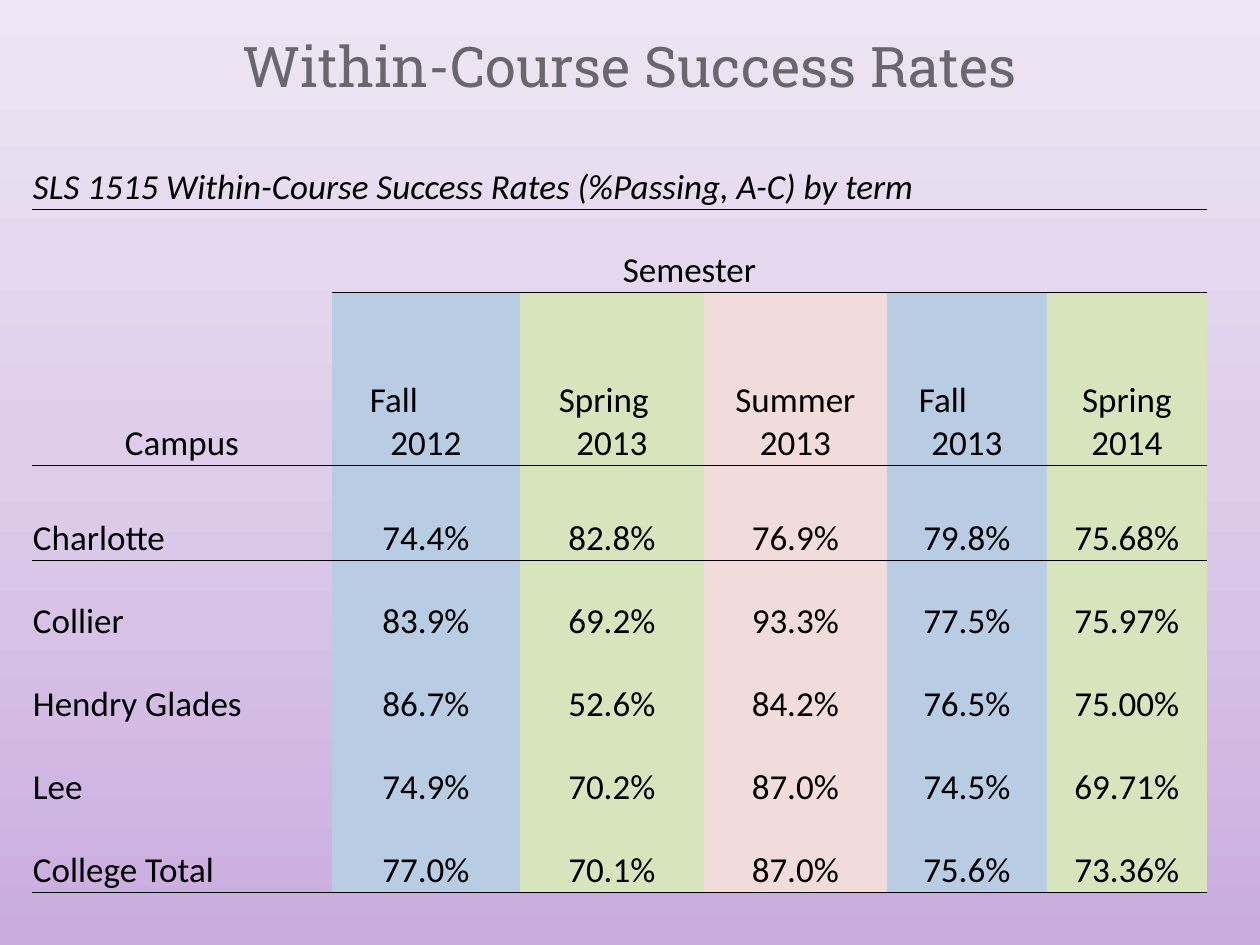
"""Build the within-course success rates slide."""
import pptx
import pptx.dml.color
import pptx.enum.text
import pptx.oxml.ns
import pptx.util
from lxml import etree

qn = pptx.oxml.ns.qn
ALIGN = pptx.enum.text.PP_ALIGN
ANCHOR = pptx.enum.text.MSO_ANCHOR
BLUE, GREEN, PINK = "B8CCE4", "D8E4BC", "F2DCDB"
TERM_FILLS = [BLUE, GREEN, PINK, BLUE, GREEN]
COL_WIDTHS = [300, 188, 184, 183, 160, 160]
ROW_HEIGHTS = [83, 83, 173, 95, 83, 83, 83, 83]
RULED_ROWS = {0, 1, 2, 7}
NO_STYLE = "{2D5ABB26-0587-4C30-8999-92F81FD0307C}"
TERMS = [
    [("Fall", 37), ("2012", 0)],
    [("Spring", 38), ("2013", 0)],
    [("Summer 2013", 0)],
    [("Fall", 31), ("2013", 0)],
    [("Spring 2014", 0)],
]
RATES = [
    ["Charlotte", "74.4%", "82.8%", "76.9%", "79.8%", "75.68%"],
    ["Collier", "83.9%", "69.2%", "93.3%", "77.5%", "75.97%"],
    ["Hendry Glades", "86.7%", "52.6%", "84.2%", "76.5%", "75.00%"],
    ["Lee", "74.9%", "70.2%", "87.0%", "74.5%", "69.71%"],
    ["College Total", "77.0%", "70.1%", "87.0%", "75.6%", "73.36%"],
]


def px(n):
    """Turn pixels into EMU."""
    return pptx.util.Emu(n * 914400 // 126)


def rgb(value):
    """Turn a hex string into a colour."""
    return pptx.dml.color.RGBColor.from_string(value)


def set_background(s, stops):
    """Fill the slide with a gradient rising from the bottom."""
    fill = s.background.fill
    fill.gradient()
    fill.gradient_angle = 90
    gs_list = next(s.element.iter(qn("a:gsLst")))
    for gs in list(gs_list):
        gs_list.remove(gs)
    for percent, color in stops:
        gs = etree.SubElement(gs_list, qn("a:gs"), pos=str(percent * 1000))
        etree.SubElement(gs, qn("a:srgbClr"), val=color)


def add_run(p, text, size, font, color, italic=False):
    """Add one formatted run to a paragraph."""
    r = p.add_run()
    r.text = text
    r.font.size = pptx.util.Pt(size)
    r.font.name = font
    r.font.italic = italic
    r.font.color.rgb = rgb(color)


def set_title(s, text):
    """Place and format the title."""
    sp = s.shapes.title
    sp.left, sp.top, sp.width, sp.height = px(63), px(21), px(1134), px(84)
    tf = sp.text_frame
    tf.vertical_anchor = ANCHOR.BOTTOM
    p = tf.paragraphs[0]
    p.alignment = ALIGN.CENTER
    add_run(p, text, 32, "Roboto Slab", "69676D")


def write_cell(cell, lines, align=ALIGN.CENTER, italic=False):
    """Write lines of (text, indent); an indented line starts at the left."""
    tf = cell.text_frame
    for i, (text, indent) in enumerate(lines):
        p = tf.add_paragraph() if i else tf.paragraphs[0]
        p.alignment = ALIGN.LEFT if indent else align
        if indent:
            p._p.get_or_add_pPr().set("marL", str(px(indent)))
        add_run(p, text, 20, "Calibri", "000000", italic)


def rule_cell(cell, tag):
    """Draw a thin black line on one edge of a cell."""
    ln = etree.SubElement(cell._tc.get_or_add_tcPr(), qn(tag), w="6350")
    fill = etree.SubElement(ln, qn("a:solidFill"))
    etree.SubElement(fill, qn("a:srgbClr"), val="000000")


def format_cell(cell, row, col):
    """Set margins, rules and fill of a cell."""
    cell.vertical_anchor = ANCHOR.BOTTOM
    cell.margin_left = cell.margin_right = cell.margin_top = px(1)
    cell.margin_bottom = 0
    last = row + cell.span_height - 1 if cell.is_merge_origin else row
    if row - 1 in RULED_ROWS:
        rule_cell(cell, "a:lnT")
    if last in RULED_ROWS:
        rule_cell(cell, "a:lnB")
    if row >= 2 and col >= 1:
        cell.fill.solid()
        cell.fill.fore_color.rgb = rgb(TERM_FILLS[col - 1])
    else:
        cell.fill.background()


def add_table(s):
    """Add the empty table with its merged headings."""
    frame = s.shapes.add_table(len(ROW_HEIGHTS), len(COL_WIDTHS), px(32), px(126),
                               px(sum(COL_WIDTHS)), px(sum(ROW_HEIGHTS)))
    table = frame.table
    table.first_row = table.horz_banding = False
    next(frame._element.iter(qn("a:tableStyleId"))).text = NO_STYLE
    for column, width in zip(table.columns, COL_WIDTHS):
        column.width = px(width)
    for row, height in zip(table.rows, ROW_HEIGHTS):
        row.height = px(height)
    table.cell(0, 0).merge(table.cell(0, 4))
    table.cell(1, 0).merge(table.cell(2, 0))
    table.cell(1, 1).merge(table.cell(1, 4))
    for i, row in enumerate(table.rows):
        for j, cell in enumerate(row.cells):
            if not cell.is_spanned:
                format_cell(cell, i, j)
    return table


def fill_table(table):
    """Write the headings and the rates."""
    caption = "SLS 1515 Within-Course Success Rates (%Passing, A-C) by term"
    write_cell(table.cell(0, 0), [(caption, 0)], ALIGN.LEFT, True)
    write_cell(table.cell(1, 0), [("Campus", 0)])
    write_cell(table.cell(1, 1), [("Semester", 0)])
    for j, lines in enumerate(TERMS, 1):
        write_cell(table.cell(2, j), lines)
    for i, values in enumerate(RATES, 3):
        for j, text in enumerate(values):
            write_cell(table.cell(i, j), [(text, 0)], ALIGN.CENTER if j else ALIGN.LEFT)


def main():
    """Build and save the slide."""
    prs = pptx.Presentation()
    prs.slide_width, prs.slide_height = px(1260), px(945)
    s = prs.slides.add_slide(prs.slide_layouts[5])
    set_background(s, [(0, "CAACDF"), (50, "DDCCEA"), (100, "EEE6F4")])
    set_title(s, "Within-Course Success Rates")
    fill_table(add_table(s))
    prs.save("out.pptx")


if __name__ == "__main__":
    main()
